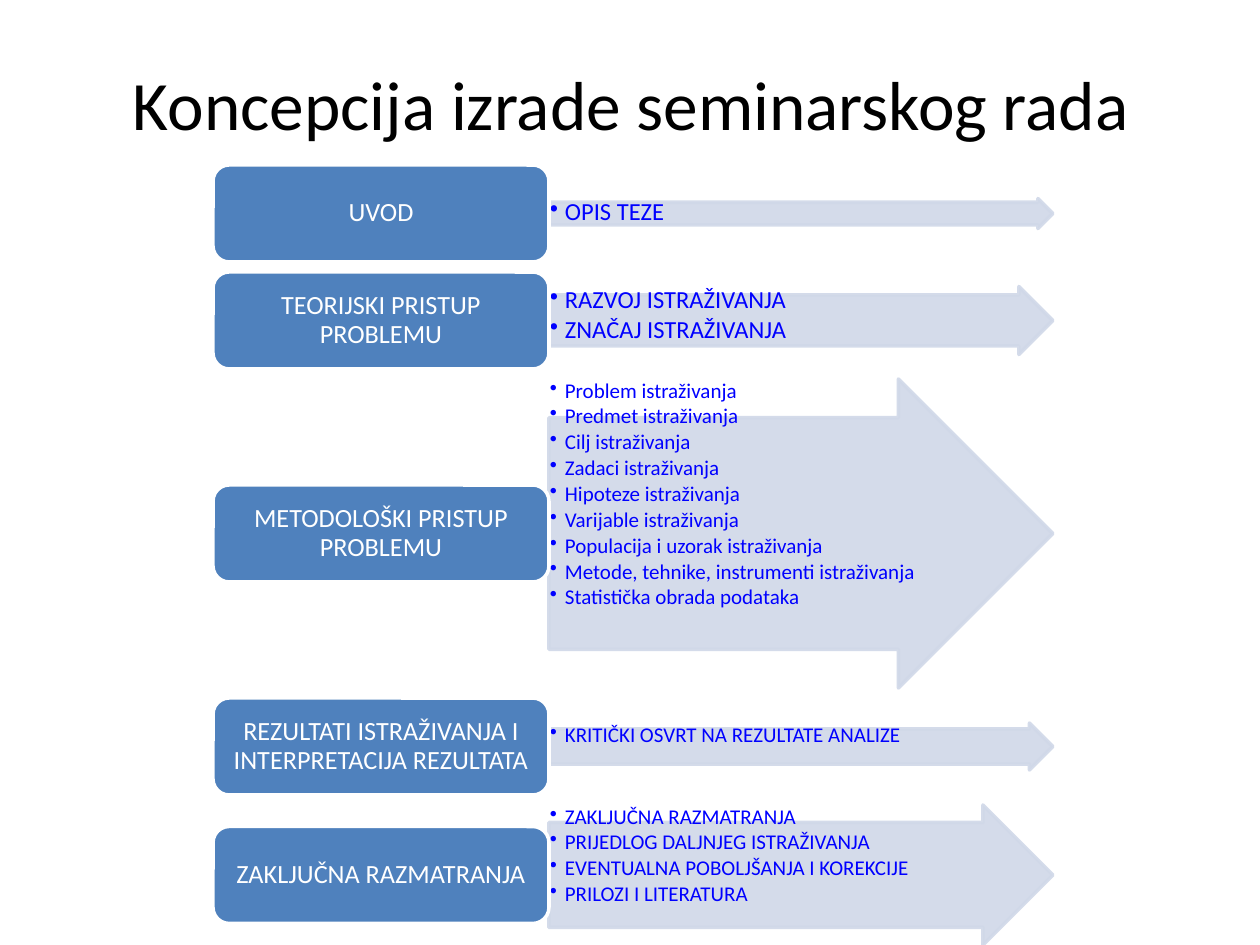
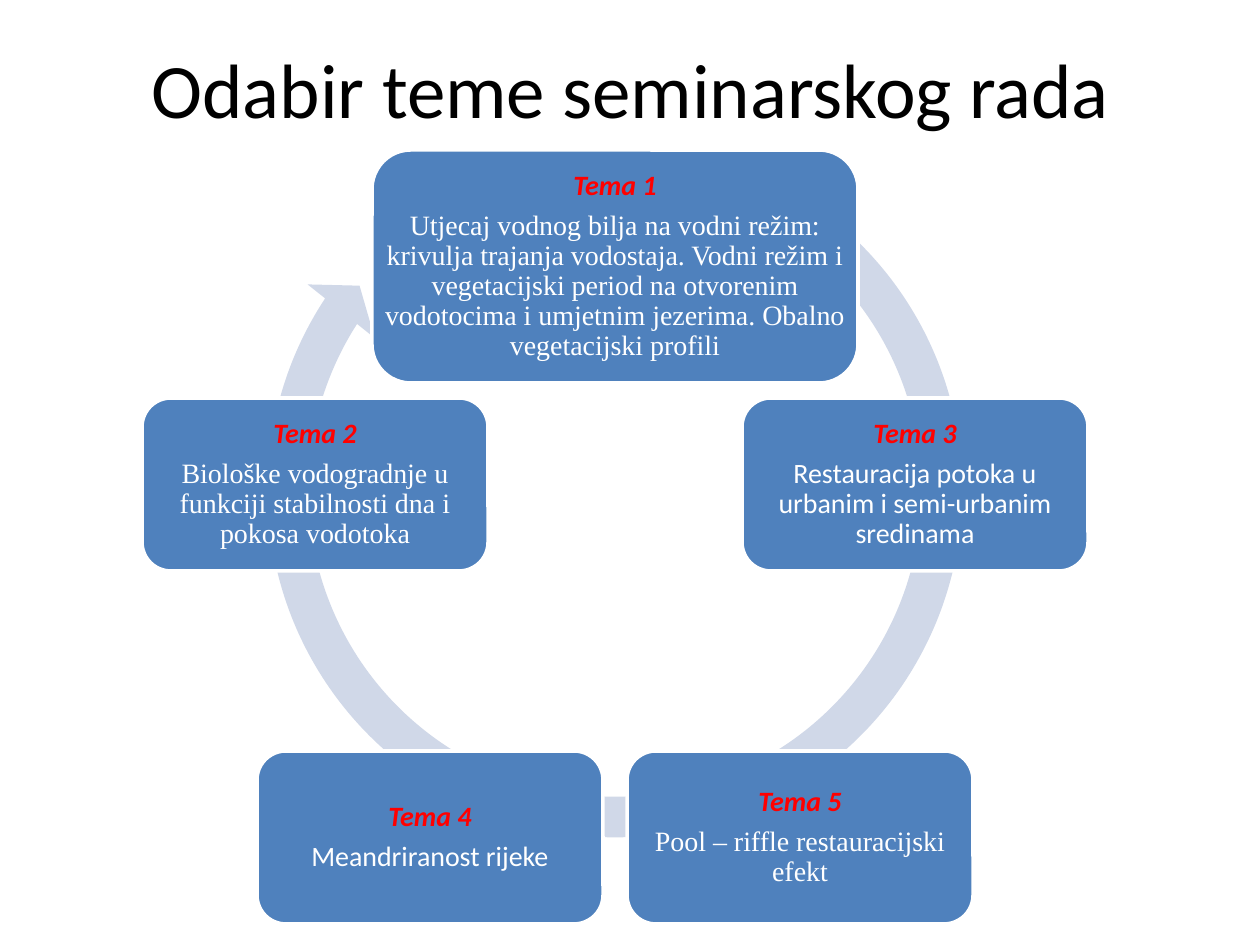
from dataclasses import dataclass

from lxml import etree
from pptx import Presentation
from pptx.dml.color import RGBColor
from pptx.enum.shapes import MSO_SHAPE
from pptx.enum.text import MSO_ANCHOR, PP_ALIGN
from pptx.oxml.ns import qn
from pptx.util import Emu, Pt

ARROW = MSO_SHAPE.RIGHT_ARROW
RING = MSO_SHAPE.CIRCULAR_ARROW
ROUNDED = MSO_SHAPE.ROUNDED_RECTANGLE
TOP, MIDDLE = MSO_ANCHOR.TOP, MSO_ANCHOR.MIDDLE
CENTER = PP_ALIGN.CENTER

EMU_PER_PX = 914400 / 126
SLIDE_W, SLIDE_H = 1260, 945
TITLE_ONLY = 5


@dataclass(frozen=True)
class Theme:
    box: str = "4F81BD"
    pale: str = "D0D8E8"
    white: str = "FFFFFF"
    ink: str = "000000"
    bullet: str = "0000FF"
    topic: str = "FF0000"
    sans: str = "Calibri"
    serif: str = "Times New Roman"
    step_size: float = 15
    topic_size: float = 16
    outline: float = 2
    line_spacing: float = 0.9
    box_gap: float = 0.35
    bullet_gap: float = 0.15


THEME = Theme()

# step, height of its arrow, size of its points, points
STEPS = [
    ("UVOD", 30, 14, ["OPIS TEZE"]),
    ("TEORIJSKI PRISTUP PROBLEMU", 68, 14,
     ["RAZVOJ ISTRAŽIVANJA", "ZNAČAJ ISTRAŽIVANJA"]),
    ("METODOLOŠKI PRISTUP PROBLEMU", 309, 12,
     ["Problem istraživanja", "Predmet istraživanja", "Cilj istraživanja",
      "Zadaci istraživanja", "Hipoteze istraživanja",
      "Varijable istraživanja", "Populacija i uzorak istraživanja",
      "Metode, tehnike, instrumenti istraživanja",
      "Statistička obrada podataka"]),
    ("REZULTATI ISTRAŽIVANJA I INTERPRETACIJA REZULTATA", 47, 12,
     ["KRITIČKI OSVRT NA REZULTATE ANALIZE"]),
    ("ZAKLJUČNA RAZMATRANJA", 140, 12,
     ["ZAKLJUČNA RAZMATRANJA", "PRIJEDLOG DALJNJEG ISTRAŽIVANJA",
      "EVENTUALNA POBOLJŠANJA I KOREKCIJE", "PRILOZI I LITERATURA"]),
]

# topic, subject, font, offset from the ring's centre line, top, width, height
TOPICS = [
    ("Tema 1", "Utjecaj vodnog bilja na vodni režim: krivulja trajanja "
     "vodostaja. Vodni režim i vegetacijski period na otvorenim vodotocima "
     "i umjetnim jezerima. Obalno vegetacijski profili",
     THEME.serif, 0, 30, 486, 233),
    ("Tema 3", "Restauracija potoka u urbanim i semi-urbanim sredinama",
     THEME.sans, 300, 278, 346, 173),
    ("Tema 5", "Pool – riffle restauracijski efekt",
     THEME.serif, 185, 631, 346, 173),
    ("Tema 4", "Meandriranost rijeke", THEME.sans, -185, 631, 346, 173),
    ("Tema 2", "Biološke vodogradnje u funkciji stabilnosti dna i pokosa "
     "vodotoka", THEME.serif, -300, 278, 346, 173),
]


def px(length):
    return Emu(round(length * EMU_PER_PX))


def px_box(*box):
    return [px(length) for length in box]


def color(code):
    return RGBColor.from_string(code)


def style_runs(paragraph, size, code, font=THEME.sans, emphasis=False):
    for run in paragraph.runs:
        run.font.size = Pt(size)
        run.font.name = font
        run.font.color.rgb = color(code)
        run.font.bold = run.font.italic = emphasis


def space_lines(paragraph, size, gap):
    """Tighten the lines and add a gap given as a share of the type size."""
    paragraph.line_spacing = THEME.line_spacing
    paragraph.space_after = Pt(round(size * gap, 1))


def set_margins(frame, margin):
    frame.word_wrap = True
    frame.margin_left = frame.margin_right = px(margin)
    frame.margin_top = frame.margin_bottom = px(margin)


def add_filled(slide, kind, box, fill, line=None):
    shape = slide.shapes.add_shape(kind, *px_box(*box))
    shape.shadow.inherit = False
    shape.fill.solid()
    shape.fill.fore_color.rgb = color(fill)
    if line:
        shape.line.color.rgb = color(line)
        shape.line.width = Pt(THEME.outline)
    else:
        shape.line.fill.background()
    return shape


def add_rounded_box(slide, box, lines):
    """Each line is (text, size, colour, font, emphasis)."""
    shape = add_filled(slide, ROUNDED, box, THEME.box, THEME.white)
    frame = shape.text_frame
    set_margins(frame, 0)
    frame.vertical_anchor = MIDDLE
    frame.text = "\n".join(line[0] for line in lines)
    for paragraph, (_, size, *look) in zip(frame.paragraphs, lines):
        paragraph.alignment = CENTER
        space_lines(paragraph, size, THEME.box_gap)
        style_runs(paragraph, size, *look)


def add_pale_arrow(slide, box):
    arrow = add_filled(slide, ARROW, box, THEME.pale, THEME.pale)
    arrow.adjustments[0], arrow.adjustments[1] = 0.75, 0.5
    for tint in arrow._element.spPr.iter(qn("a:srgbClr")):
        etree.SubElement(tint, qn("a:alpha"), val="90000")


def add_points(slide, box, points, size):
    frame = slide.shapes.add_textbox(*px_box(*box)).text_frame
    set_margins(frame, 1)
    frame.vertical_anchor = TOP
    frame.text = "\n".join(points)
    for paragraph in frame.paragraphs:
        paragraph.level = 1
        space_lines(paragraph, size, THEME.bullet_gap)
        style_runs(paragraph, size, THEME.bullet)
        props = paragraph._p.get_or_add_pPr()
        props.set("marL", str(px(15)))
        props.set("indent", str(px(-15)))
        etree.SubElement(props, qn("a:buChar"), char="•")


def add_titled_slide(deck, text, box, size, anchor):
    slide = deck.slides.add_slide(deck.slide_layouts[TITLE_ONLY])
    title = slide.shapes.title
    title.left, title.top, title.width, title.height = px_box(*box)
    frame = title.text_frame
    frame.text = text
    frame.vertical_anchor = anchor
    frame.paragraphs[0].alignment = CENTER
    style_runs(frame.paragraphs[0], size, THEME.ink)
    return slide


def add_steps(slide, left, top):
    """Stack the rows; each is as tall as its box or its arrow."""
    step_w, step_h, arrow_w, gap = 336, 97, 504, 10
    for step, arrow_h, size, points in STEPS:
        row_h = max(step_h, arrow_h)
        arrow_box = (left + step_w, top + (row_h - arrow_h) / 2,
                     arrow_w, arrow_h)
        add_pale_arrow(slide, arrow_box)
        add_points(slide, arrow_box, points, size)
        add_rounded_box(
            slide, (left, top + (row_h - step_h) / 2, step_w, step_h),
            [(step, THEME.step_size, THEME.white)])
        top += row_h + gap


def add_topic_ring(slide, left, top, diameter):
    ring = add_filled(slide, RING, (left, top, diameter, diameter), THEME.pale)
    for index, value in enumerate((0.055, 3.307, 127.881, 180.21, 0.058)):
        ring.adjustments[index] = value
    center = left + diameter / 2
    for topic, subject, font, offset, drop, width, height in TOPICS:
        box = (center + offset - width / 2, top + drop, width, height)
        add_rounded_box(slide, box, [
            (topic, THEME.topic_size, THEME.topic, THEME.sans, True),
            (subject, THEME.topic_size, THEME.white, font)])


def main():
    deck = Presentation()
    deck.slide_width, deck.slide_height = px(SLIDE_W), px(SLIDE_H)

    concept = add_titled_slide(deck, "Koncepcija izrade seminarskog rada",
                               (64, 55, 1134, 176), 39.6, TOP)
    add_steps(concept, 213, 165)

    topics = add_titled_slide(deck, "Odabir teme seminarskog rada",
                              (64, 0, 1134, 176), 44, MIDDLE)
    add_topic_ring(topics, 245, 120, 740)

    deck.save("out.pptx")


if __name__ == "__main__":
    main()
